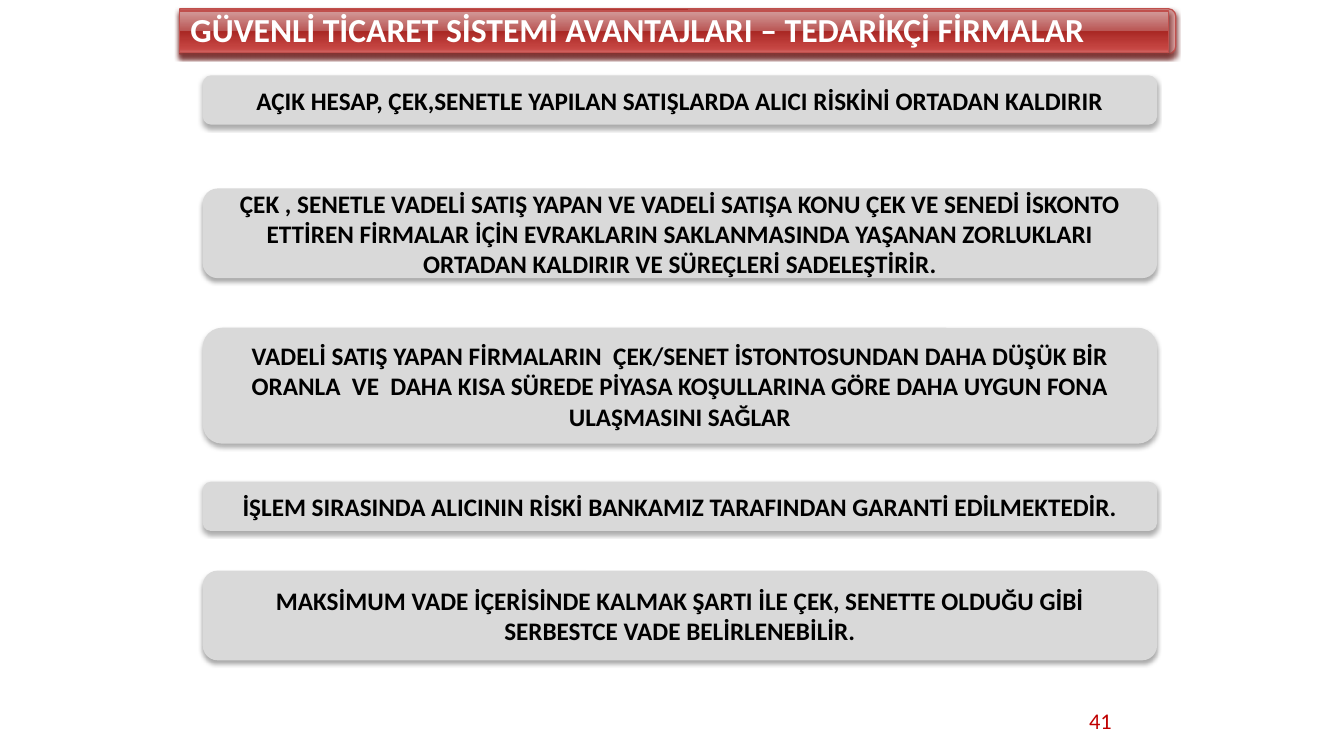
from lxml.etree import SubElement as Sub
from pptx import Presentation as Deck
from pptx.dml.color import RGBColor as RGB
from pptx.enum.shapes import MSO_SHAPE as Kind
from pptx.enum.text import MSO_ANCHOR as Anchor, MSO_AUTO_SIZE as Fit, PP_ALIGN as Align
from pptx.oxml.ns import qn
from pptx.util import Cm, Pt

BLACK = RGB(0x00, 0x00, 0x00)
WHITE = RGB(0xFF, 0xFF, 0xFF)
GREY = RGB(0xD9, 0xD9, 0xD9)
RED = RGB(0xC0, 0x00, 0x00)
EDGE = RGB(0xC0, 0x50, 0x4D)
SHADE = RGB(0x77, 0x31, 0x30)
GLOSS = [
    (0, RGB(0xD3, 0x9A, 0x99)),
    (49, RGB(0xB9, 0x55, 0x53)),
    (49, RGB(0xAA, 0x29, 0x25)),
    (92, RGB(0xC7, 0x47, 0x44)),
    (100, RGB(0xD1, 0x67, 0x65)),
]

TITLE = "GÜVENLİ TİCARET SİSTEMİ AVANTAJLARI – TEDARİKÇİ FİRMALAR"
CARDS = [
    (1.9, 1.24, "AÇIK HESAP, ÇEK,SENETLE YAPILAN SATIŞLARDA ALICI RİSKİNİ ORTADAN KALDIRIR"),
    (4.75, 2.26, "ÇEK , SENETLE VADELİ SATIŞ YAPAN VE VADELİ SATIŞA KONU ÇEK VE SENEDİ İSKONTO "
                 "ETTİREN FİRMALAR İÇİN EVRAKLARIN SAKLANMASINDA YAŞANAN ZORLUKLARI "
                 "ORTADAN KALDIRIR VE SÜREÇLERİ SADELEŞTİRİR."),
    (8.26, 2.92, "VADELİ SATIŞ YAPAN FİRMALARIN  ÇEK/SENET İSTONTOSUNDAN DAHA DÜŞÜK BİR "
                 "ORANLA  VE  DAHA KISA SÜREDE PİYASA KOŞULLARINA GÖRE DAHA UYGUN FONA "
                 "ULAŞMASINI SAĞLAR"),
    (12.14, 1.24, "İŞLEM SIRASINDA ALICININ RİSKİ BANKAMIZ TARAFINDAN GARANTİ EDİLMEKTEDİR."),
    (14.38, 2.26, "MAKSİMUM VADE İÇERİSİNDE KALMAK ŞARTI İLE ÇEK, SENETTE OLDUĞU GİBİ "
                  "SERBESTCE VADE BELİRLENEBİLİR."),
]


def write(shape, text, size=18, color=BLACK, bold=True, align=Align.CENTER,
          pad=(0.25, 0.13), lead=1.0):
    frame = shape.text_frame
    frame.word_wrap = True
    frame.auto_size = Fit.NONE
    frame.vertical_anchor = Anchor.MIDDLE
    frame.margin_left = frame.margin_right = Cm(pad[0])
    frame.margin_top = frame.margin_bottom = Cm(pad[1])
    line = frame.paragraphs[0]
    line.alignment = align
    line.line_spacing = lead
    run = line.add_run()
    run.text = text
    font = run.font
    font.name = "Calibri"
    font.size = Pt(size)
    font.bold = bold
    font.color.rgb = color


def tint(parent, color):
    return Sub(parent, qn("a:srgbClr"), val=str(color))


def shadow(shape, color, alpha, blur, dist):
    shape.shadow.inherit = False
    effect = shape.element.spPr.find(qn("a:effectLst"))
    drop = Sub(effect, qn("a:outerShdw"), blurRad=str(Pt(blur)),
               dist=str(Pt(dist)), dir="5400000", rotWithShape="0")
    Sub(tint(drop, color), qn("a:alpha"), val=str(alpha * 1000))


def gloss(shape):
    shape.fill.gradient()
    shape.fill.gradient_angle = 270
    stops = shape.element.spPr.find(qn("a:gradFill")).find(qn("a:gsLst"))
    stops.clear()
    for pos, color in GLOSS:
        tint(Sub(stops, qn("a:gs"), pos=str(pos * 1000)), color)
    shape.line.color.rgb = EDGE
    shape.line.width = Pt(0.9)
    shadow(shape, SHADE, 83, 3.1, 2)


def place(shape, left, top, width, height):
    shape.left, shape.top = Cm(left), Cm(top)
    shape.width, shape.height = Cm(width), Cm(height)


def banner(slide):
    bar = slide.shapes.add_shape(Kind.ROUND_2_SAME_RECTANGLE,
                                 Cm(16.51), Cm(-11.76), Cm(1.14), Cm(25.1))
    bar.rotation = 90
    gloss(bar)
    title = slide.shapes.title
    place(title, 4.52, 0.28, 24.92, 1.04)
    gloss(title)
    write(title, TITLE, size=24, color=WHITE, align=Align.LEFT,
          pad=(0.28, 0.15), lead=0.9)
    bar.element.addnext(title.element)


def card(slide, top, height, text):
    box = slide.shapes.add_shape(Kind.ROUNDED_RECTANGLE,
                                 Cm(5.11), Cm(top), Cm(24.05), Cm(height))
    box.fill.solid()
    box.fill.fore_color.rgb = GREY
    box.line.fill.background()
    shadow(box, BLACK, 32, 3.5, 2.2)
    write(box, text)


def number(slide, text):
    box = slide.shapes.add_textbox(Cm(22.43), Cm(17.65), Cm(5.92), Cm(1.02))
    write(box, text, size=16, color=RED, bold=False, align=Align.RIGHT,
          pad=(0.33, 0.18))


def main():
    deck = Deck()
    deck.slide_width, deck.slide_height = Cm(33.87), Cm(19.05)
    slide = deck.slides.add_slide(deck.slide_layouts[5])
    banner(slide)
    for top, height, text in CARDS:
        card(slide, top, height, text)
    number(slide, "41")
    deck.save("out.pptx")


if __name__ == "__main__":
    main()
